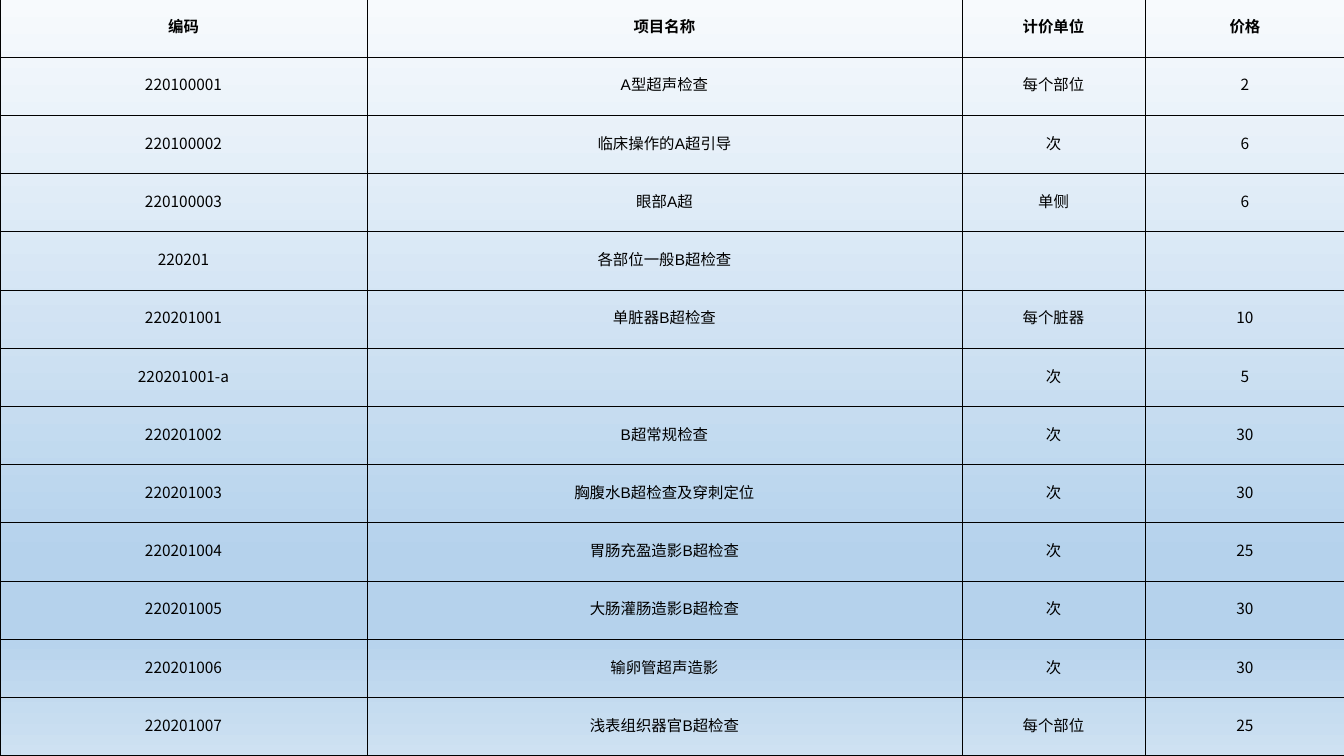
from lxml.etree import SubElement
from pptx import Presentation
from pptx.dml.color import RGBColor
from pptx.enum.text import MSO_ANCHOR, PP_ALIGN
from pptx.oxml.ns import qn
from pptx.util import Cm, Pt

CJK_FONT = "Noto Sans CJK SC"
LATIN_FONT = "Arial"
BLACK = "000000"
BACKGROUND_STOPS = [(0, "F7FAFD"), (74, "B5D2EC"), (83, "B5D2EC"), (100, "CEE1F2")]

COLUMN_WIDTHS = [9.25, 14.99, 4.62, 5.03]
TABLE_HEIGHT = 19.08
PRICE_LIST = [
    ("编码", "项目名称", "计价单位", "价格"),
    ("220100001", "A型超声检查", "每个部位", "2"),
    ("220100002", "临床操作的A超引导", "次", "6"),
    ("220100003", "眼部A超", "单侧", "6"),
    ("220201", "各部位一般B超检查", "", ""),
    ("220201001", "单脏器B超检查", "每个脏器", "10"),
    ("220201001-a", "", "次", "5"),
    ("220201002", "B超常规检查", "次", "30"),
    ("220201003", "胸腹水B超检查及穿刺定位", "次", "30"),
    ("220201004", "胃肠充盈造影B超检查", "次", "25"),
    ("220201005", "大肠灌肠造影B超检查", "次", "30"),
    ("220201006", "输卵管超声造影", "次", "30"),
    ("220201007", "浅表组织器官B超检查", "每个部位", "25"),
]


def rgb(value):
    return RGBColor.from_string(value)


def add_xml_color(parent, value):
    SubElement(parent, qn("a:srgbClr"), val=value)


def set_background(slide, stops):
    fill = slide.background.fill
    fill.gradient()
    fill.gradient_angle = 270  # counter-clockwise, so top to bottom
    # The public methods cannot add stops
    stop_list = next(slide.background._cSld.iter(qn("a:gsLst")))
    for old_stop in list(stop_list):
        stop_list.remove(old_stop)
    for percent, color in stops:
        stop = SubElement(stop_list, qn("a:gs"), pos=str(percent * 1000))
        add_xml_color(stop, color)


def add_borders(cell, color, width):
    properties = cell._tc.get_or_add_tcPr()
    for side in ("lnL", "lnR", "lnT", "lnB"):
        border = SubElement(properties, qn(f"a:{side}"), w=str(Pt(width)))
        add_xml_color(SubElement(border, qn("a:solidFill")), color)


def add_text(cell, text, font_name, bold):
    paragraph = cell.text_frame.paragraphs[0]
    paragraph.alignment = PP_ALIGN.CENTER
    run = paragraph.add_run()
    run.text = text
    run.font.size = Pt(11)
    run.font.bold = bold
    run.font.color.rgb = rgb(BLACK)
    run.font.name = font_name
    SubElement(run.font._element, qn("a:ea"), typeface=CJK_FONT)


def format_cell(cell):
    cell.margin_left = cell.margin_right = cell.margin_top = Cm(0.03)
    cell.margin_bottom = Cm(0.13)
    cell.vertical_anchor = MSO_ANCHOR.MIDDLE
    add_borders(cell, BLACK, 0.5)
    cell.fill.background()


def add_price_table(slide, rows):
    table = slide.shapes.add_table(
        len(rows), len(COLUMN_WIDTHS), Cm(0), Cm(-0.03),
        Cm(sum(COLUMN_WIDTHS)), Cm(TABLE_HEIGHT)).table
    table.first_row = table.horz_banding = False
    for column, width in zip(table.columns, COLUMN_WIDTHS):
        column.width = Cm(width)
    for row_index, row in enumerate(rows):
        is_header = row_index == 0
        for column_index, text in enumerate(row):
            cell = table.cell(row_index, column_index)
            format_cell(cell)
            if text:
                # Codes and prices are set in the CJK font
                is_number = text[0].isdigit()
                add_text(cell, text, CJK_FONT if is_number else LATIN_FONT, is_header)


def main():
    presentation = Presentation()
    presentation.slide_width = Cm(33.87)
    presentation.slide_height = Cm(19.05)
    slide = presentation.slides.add_slide(presentation.slide_layouts[6])
    set_background(slide, BACKGROUND_STOPS)
    add_price_table(slide, PRICE_LIST)
    presentation.save("out.pptx")


if __name__ == "__main__":
    main()
